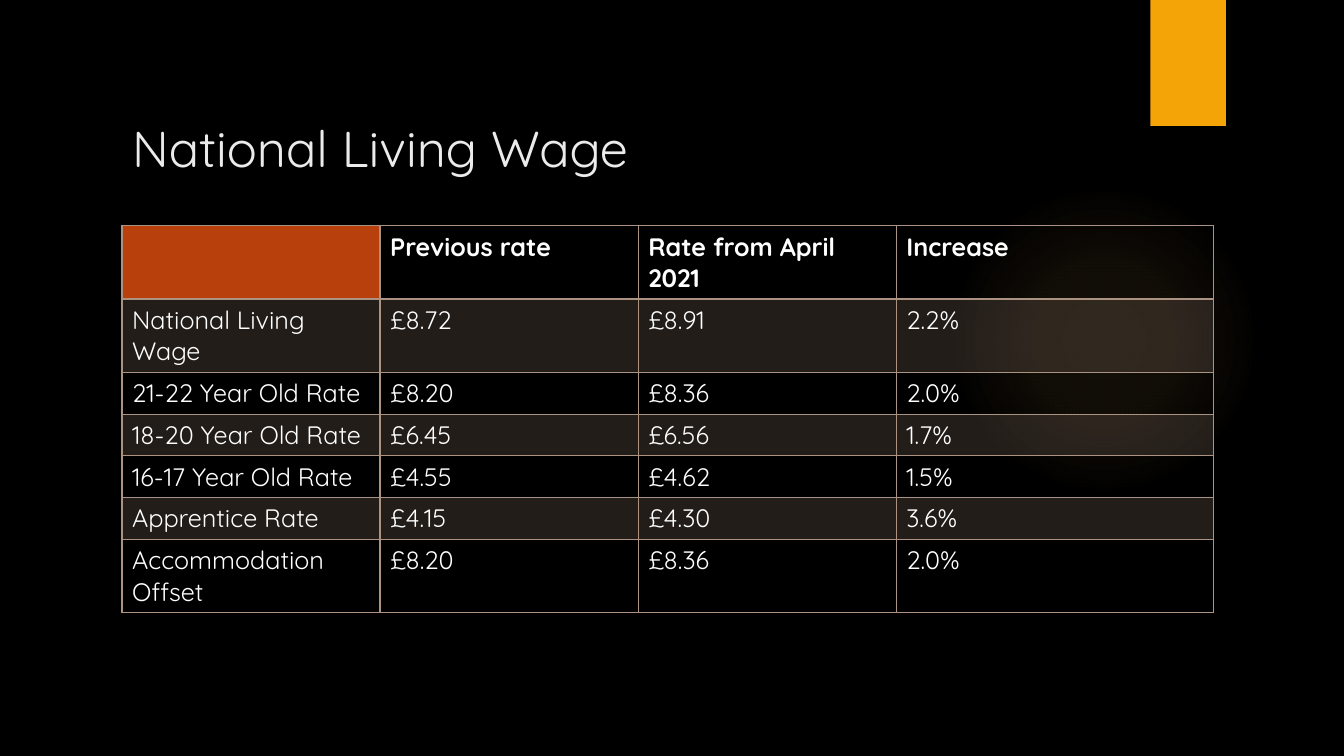
from pptx import Presentation
from pptx.dml.color import RGBColor
from pptx.enum.shapes import MSO_SHAPE
from pptx.enum.text import MSO_ANCHOR
from pptx.oxml import parse_xml
from pptx.oxml.ns import qn
from pptx.util import Inches, Pt

OVAL, RECT = MSO_SHAPE.OVAL, MSO_SHAPE.RECTANGLE
TOP = MSO_ANCHOR.TOP
BLACK = RGBColor(0, 0, 0)
WHITE = RGBColor(0xFF, 0xFF, 0xFF)
PALE = RGBColor(0xEB, 0xEB, 0xEB)
AMBER = RGBColor(0xF5, 0xA4, 0x08)
GLOW = RGBColor(0xFA, 0xC9, 0x6A)
RUST = RGBColor(0xB7, 0x40, 0x0D)
TAN = RGBColor(0xAB, 0x92, 0x81)
FONT = "Quicksand"
NS = 'xmlns:a="http://schemas.openxmlformats.org/drawingml/2006/main"'
PLAIN = "{2D5ABB26-0587-4C30-8999-92F81FD0307C}"

COLS = [2.56, 2.56, 2.56, 3.15]
TALL, LOW = 0.7, 0.41
RATES = [
    ["", "Previous rate", "Rate from April 2021", "Increase"],
    ["National Living Wage", "£8.72", "£8.91", "2.2%"],
    ["21-22 Year Old Rate", "£8.20", "£8.36", "2.0%"],
    ["18-20 Year Old Rate", "£6.45", "£6.56", "1.7%"],
    ["16-17 Year Old Rate", "£4.55", "£4.62", "1.5%"],
    ["Apprentice Rate", "£4.15", "£4.30", "3.6%"],
    ["Accommodation Offset", "£8.20", "£8.36", "2.0%"],
]


def add_shape(slide, kind, box):
    shape = slide.shapes.add_shape(kind, *map(Inches, box))
    shape.shadow.inherit = False
    shape.line.fill.background()
    return shape


def add_glow(slide, box):
    """Soft round light that fades out from its centre."""
    stops = "".join(
        f'<a:gs pos="{pos * 1000}"><a:srgbClr val="{GLOW}">'
        f'<a:alpha val="{alpha * 1000}"/></a:srgbClr></a:gs>'
        for pos, alpha in [(0, 7), (36, 6), (69, 0)])
    fill = parse_xml(
        f'<a:gradFill {NS}><a:gsLst>{stops}</a:gsLst><a:path path="circle">'
        '<a:fillToRect l="50000" t="50000" r="50000" b="50000"/>'
        '</a:path></a:gradFill>')
    oval = add_shape(slide, OVAL, box)
    oval.element.spPr.find(qn("a:prstGeom")).addnext(fill)


def add_tab(slide, box):
    tab = add_shape(slide, RECT, box)
    tab.fill.solid()
    tab.fill.fore_color.rgb = AMBER


def set_title(slide, box, text):
    title = slide.shapes.title
    title.left, title.top, title.width, title.height = map(Inches, box)
    frame = title.text_frame
    frame.text = text
    frame.vertical_anchor = TOP
    para = frame.paragraphs[0]
    para.alignment = 1
    set_font(para.font, 36, PALE)


def set_font(font, size, color, bold=False):
    font.name, font.size, font.bold = FONT, Pt(size), bold
    font.color.rgb = color


def set_edges(cell, head):
    props = cell._tc.get_or_add_tcPr()
    for side in "LRTB":
        width = Pt(2 if head and side == "B" else 1)
        props.append(parse_xml(
            f'<a:ln{side} {NS} w="{width}"><a:solidFill>'
            f'<a:srgbClr val="{TAN}"/></a:solidFill></a:ln{side}>'))


def set_fill(cell, row, col):
    """Rust corner, clear header and even rows, tinted odd rows."""
    if row == col == 0:
        cell.fill.solid()
        cell.fill.fore_color.rgb = RUST
    elif row % 2:
        cell.fill.solid()
        cell.fill.fore_color.rgb = TAN
        tint = cell._tc.tcPr.find(qn("a:solidFill"))[0]
        tint.append(parse_xml(f'<a:alpha {NS} val="20000"/>'))
    else:
        cell.fill.background()


def add_rates(slide, left, top):
    heights = [TALL] + [LOW] * (len(RATES) - 1)
    box = left, top, sum(COLS), sum(heights)
    table = slide.shapes.add_table(
        len(RATES), len(COLS), *map(Inches, box)).table
    table.horz_banding = False
    table._tbl.tblPr.find(qn("a:tableStyleId")).text = PLAIN
    for column, width in zip(table.columns, COLS):
        column.width = Inches(width)
    for row, (texts, height) in enumerate(zip(RATES, heights)):
        table.rows[row].height = Inches(height)
        for col, text in enumerate(texts):
            cell = table.cell(row, col)
            cell.text = text
            cell.margin_left = Inches(0.1)
            cell.margin_right = Inches(0.05)
            set_font(cell.text_frame.paragraphs[0].font, 18, WHITE, row == 0)
            set_edges(cell, row == 0)
            set_fill(cell, row, col)


def main():
    deck = Presentation()
    deck.slide_width, deck.slide_height = Inches(13.33), Inches(7.5)
    slide = deck.slides.add_slide(deck.slide_layouts[5])
    slide.background.fill.solid()
    slide.background.fill.fore_color.rgb = BLACK
    # Backdrop
    add_glow(slide, (9.41, 1.83, 3.08, 3.08))
    add_tab(slide, (11.41, 0, 0.75, 1.25))
    # Content
    set_title(slide, (1.21, 1.11, 10.29, 1.53), "National Living Wage")
    add_rates(slide, 1.21, 2.24)
    deck.save("out.pptx")


if __name__ == "__main__":
    main()
